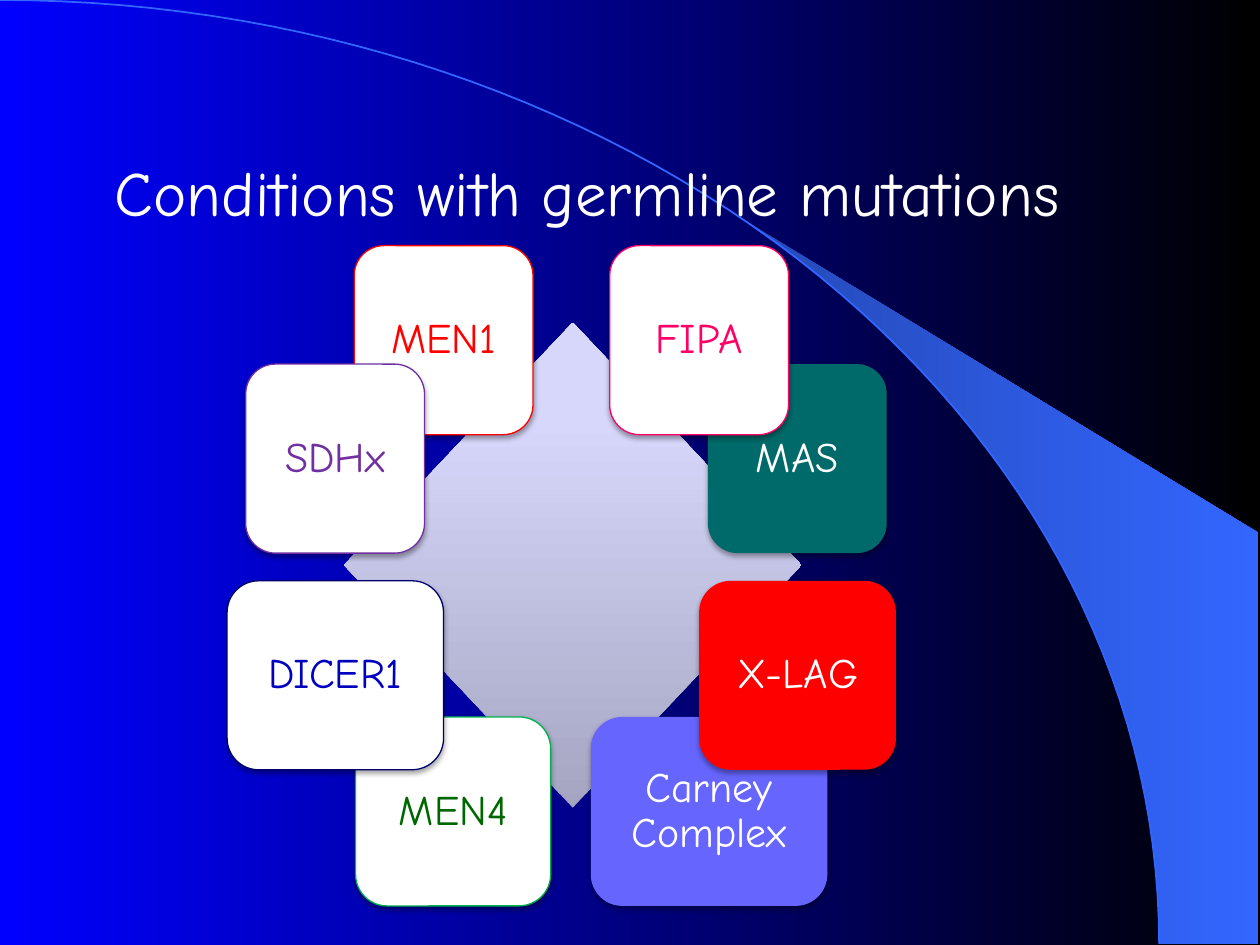
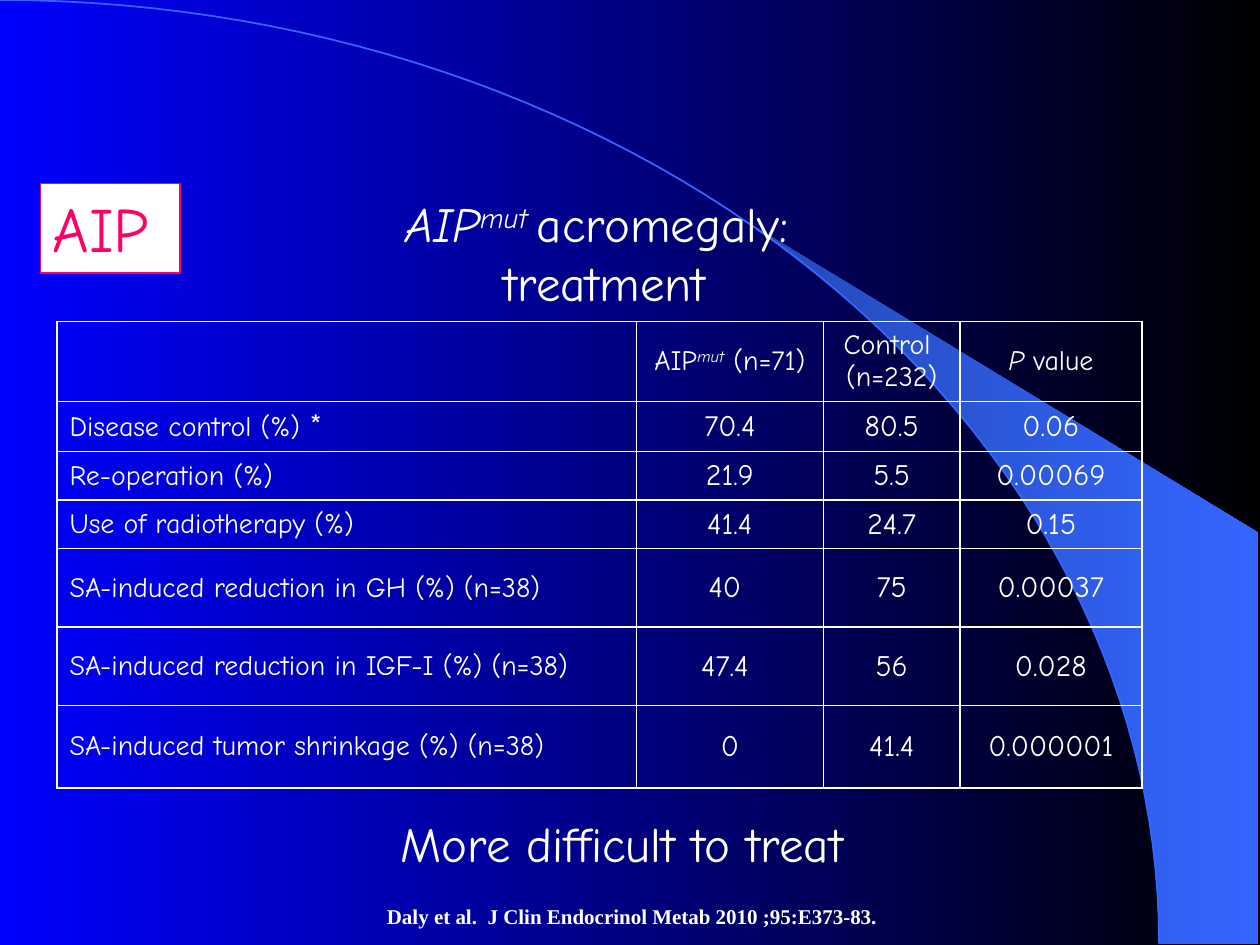
from dataclasses import dataclass
from math import asin, cos, pi, sin

from lxml.etree import SubElement as Sub
from pptx import Presentation as Deck
from pptx.dml.color import RGBColor as Rgb
from pptx.dml.fill import FillFormat as Fill
from pptx.enum.shapes import MSO_SHAPE as Form
from pptx.enum.text import MSO_ANCHOR as Anchor, PP_ALIGN as Align
from pptx.oxml.ns import qn
from pptx.shapes.autoshape import Shape
from pptx.slide import Slide
from pptx.text.text import TextFrame as Frame
from pptx.util import Pt

WIDE, HIGH = 720, 540
WHITE, BLACK, BLUE, SKY = "FFFFFF", "000000", "0000FF", "3366FF"
RED, PINK = "FF0000", "FF0066"
COMIC, TIMES = "Comic Neue", "Times New Roman"
ARC_W, ARC_H = 662.4, 539.3
FAN_X, FAN_Y, FAN_END = 424.1, 304.6, 719.3
TILE_H = 108


@dataclass
class Run:
    text: str
    size: float = 16
    ink: str = WHITE
    face: str = COMIC
    bold: bool = False
    slant: bool = False
    lift: int = 0


@dataclass
class Box:
    x: float
    y: float
    w: float
    h: float


@dataclass
class Tile:
    text: str
    x: float
    y: float
    w: float
    fill: str
    ink: str = WHITE
    edge: str = ""


@dataclass
class Note:
    box: Box
    lines: list[list[Run]]
    side: Align = Align.CENTER


TILES = [
    Tile("MEN1", 202.4, 140.4, 102.2, WHITE, RED, RED),
    Tile("MEN4", 203.2, 409.7, 111.5, WHITE, "006600", "00B050"),
    Tile("Carney Complex", 337.6, 409.7, 135.2, "6666FF"),
    Tile("SDHx", 140.4, 208.1, 102.2, WHITE, "7030A0", "7030A0"),
    Tile("MAS", 404.5, 208.1, 102.2, "006A6A"),
    Tile("DICER1", 129.8, 331.9, 123.7, WHITE, "0000BF", "00006A"),
    Tile("X-LAG", 399.5, 331.9, 112.5, RED),
    Tile("FIPA", 348.4, 140.4, 102.2, WHITE, PINK, PINK),
]

HEAD = [
    [[]],
    [[Run("AIP"), Run("mut", slant=True, lift=30), Run(" (n=71)")]],
    [[Run("Control ")], [Run("(n=232)")]],
    [[Run("P ", slant=True), Run("value")]],
]
ROWS = [
    ("Disease control (%) *", "70.4", "80.5", "0.06"),
    ("Re-operation (%)", "21.9", "5.5", "0.00069"),
    ("Use of radiotherapy (%)", "41.4", "24.7", "0.15"),
    ("SA-induced reduction in GH (%) (n=38)", "40 ", "75", "0.00037"),
    ("SA-induced reduction in IGF-I (%) (n=38)", "47.4 ", "56", "0.028"),
    ("SA-induced tumor shrinkage (%) (n=38)", "0", "41.4", "0.000001"),
]
COLS = [331, 107, 78, 104]
TALL = [45.7, 28.6, 27.7, 27.7, 44.9, 44.9, 47]

NOTES = [
    Note(Box(214, 512.6, 301, 22),
         [[Run("Daly et al.  J Clin Endocrinol Metab 2010 ;95:E373-83.",
               12, face=TIMES, bold=True)]], Align.LEFT),
    Note(Box(139, 461.5, 432.7, 50), [[Run("More difficult to treat", 28)]]),
    Note(Box(39.6, 107.3, 612, 90),
         [[Run("AIP", 28, slant=True), Run("mut ", 28, slant=True, lift=30),
           Run("acromegaly: ", 28)], [Run("treatment", 28)]]),
]


def hue(code: str) -> Rgb:
    return Rgb.from_string(code)


def put(item: object, **vals: object) -> None:
    for key, val in vals.items():
        setattr(item, key, val)


def paint(fill: Fill, code: str) -> None:
    fill.solid()
    fill.fore_color.rgb = hue(code)


def blend(fill: Fill, first: str, last: str, angle: int = 0, end: float = 1) -> None:
    fill.gradient()
    fill.gradient_angle = angle
    for stop, code, place in zip(fill.gradient_stops, (first, last), (0, end)):
        stop.color.rgb = hue(code)
        stop.position = place


def trim(shape: Shape, code: str = "", width: float = 0.75) -> None:
    shape.shadow.inherit = False
    if code:
        paint(shape.line.fill, code)
        shape.line.width = Pt(width)
    else:
        shape.line.fill.background()


def write(frame: Frame, lines: list[list[Run]], side: Align, **vals: object) -> None:
    put(frame, word_wrap=True, **vals)
    for spot, runs in enumerate(lines):
        para = frame.add_paragraph() if spot else frame.paragraphs[0]
        para.alignment = side
        for run in runs:
            part = para.add_run()
            part.text = run.text
            put(part.font, size=Pt(run.size), name=run.face,
                bold=run.bold, italic=run.slant)
            part.font.color.rgb = hue(run.ink)
            if run.lift:
                part.font._element.set("baseline", str(run.lift * 1000))


def place(box: Box) -> list[Pt]:
    return [Pt(val) for val in (box.x, box.y, box.w, box.h)]


def jot(slide: Slide, note: Note) -> None:
    frame = slide.shapes.add_textbox(*place(note.box)).text_frame
    write(frame, note.lines, note.side, vertical_anchor=Anchor.TOP)


def curve(start: float, steps: int = 60) -> list[tuple[float, float]]:
    first = asin(start / ARC_W)
    turns = [first + (pi / 2 - first) * i / steps for i in range(steps + 1)]
    return [(ARC_W * sin(t), ARC_H * (1 - cos(t))) for t in turns]


def trace(slide: Slide, dots: list[tuple[float, float]], close: bool) -> Shape:
    spots = [(Pt(x), Pt(y)) for x, y in dots]
    pen = slide.shapes.build_freeform(*spots[0])
    pen.add_line_segments(spots[1:], close=close)
    return pen.convert_to_shape()


def start(deck: Deck) -> Slide:
    slide = deck.slides.add_slide(deck.slide_layouts[6])
    blend(slide.background.fill, BLUE, BLACK)
    fan = trace(slide, curve(FAN_X) + [(FAN_END, ARC_H), (FAN_END, FAN_Y)], True)
    blend(fan.fill, "2449B6", SKY)
    trim(fan)
    arc = trace(slide, curve(0), False)
    arc.fill.background()
    trim(arc, SKY, 1)
    return slide


def shade(shape: Shape) -> None:
    glow = Sub(shape._element.spPr.find(qn("a:effectLst")), qn("a:outerShdw"),
               blurRad=str(Pt(3.1)), dist=str(Pt(1.8)), dir="5400000", rotWithShape="0")
    Sub(Sub(glow, qn("a:srgbClr"), val=BLACK), qn("a:alpha"), val="35000")


def lay(slide: Slide, tile: Tile) -> None:
    box = Box(tile.x, tile.y, tile.w, TILE_H)
    shape = slide.shapes.add_shape(Form.ROUNDED_RECTANGLE, *place(box))
    paint(shape.fill, tile.fill)
    trim(shape, tile.edge)
    shade(shape)
    pad = Pt(10.8)
    write(shape.text_frame, [[Run(tile.text, 24, tile.ink)]], Align.CENTER,
          vertical_anchor=Anchor.MIDDLE, margin_left=pad, margin_right=pad,
          margin_top=pad, margin_bottom=pad)
    shape.text_frame.paragraphs[0].line_spacing = 0.9


def label(text: str) -> list[Run]:
    stem, star, _ = text.partition("*")
    return [Run(stem)] + ([Run(star, 18)] if star else [])


def grid(slide: Slide) -> None:
    box = Box(32.6, 183.6, sum(COLS), sum(TALL))
    table = slide.shapes.add_table(len(TALL), len(COLS), *place(box)).table
    put(table, first_row=False, horz_banding=False)
    for col, width in zip(table.columns, COLS):
        col.width = Pt(width)
    for row, height in zip(table.rows, TALL):
        row.height = Pt(height)
    body = [[[label(name)]] + [[[Run(val, 17)]] for val in vals]
            for name, *vals in ROWS]
    for r, line in enumerate([HEAD] + body):
        for c, lines in enumerate(line):
            cell = table.cell(r, c)
            prop = cell._tc.get_or_add_tcPr()
            for side in ("lnL", "lnR", "lnT", "lnB"):
                edge = Sub(prop, qn(f"a:{side}"), w=str(Pt(1)))
                Sub(Sub(edge, qn("a:solidFill")), qn("a:srgbClr"), val=WHITE)
            cell.fill.background()
            cell.vertical_anchor = Anchor.MIDDLE
            write(cell.text_frame, lines, Align.CENTER if c else Align.LEFT)


def badge(slide: Slide) -> None:
    shape = slide.shapes.add_shape(Form.RECTANGLE, *place(Box(23, 105, 80, 51)))
    paint(shape.fill, WHITE)
    trim(shape, PINK)
    write(shape.text_frame, [[Run("AIP", 36, PINK)]], Align.LEFT,
          vertical_anchor=Anchor.TOP)


def main() -> None:
    deck = Deck()
    put(deck, slide_width=Pt(WIDE), slide_height=Pt(HIGH))

    wheel = start(deck)
    jot(wheel, Note(Box(29.5, 84.2, 612, 67.7),
                    [[Run("Conditions with germline mutations", 36)]]))
    gem = wheel.shapes.add_shape(Form.DIAMOND, *place(Box(196.6, 184.3, 261.4, 277.2)))
    blend(gem.fill, "A5A5C2", "D7D7FB", 90, 0.8)
    trim(gem)
    for tile in TILES:
        lay(wheel, tile)

    trial = start(deck)
    grid(trial)
    badge(trial)
    for note in NOTES:
        jot(trial, note)

    deck.save("out.pptx")


if __name__ == "__main__":
    main()
